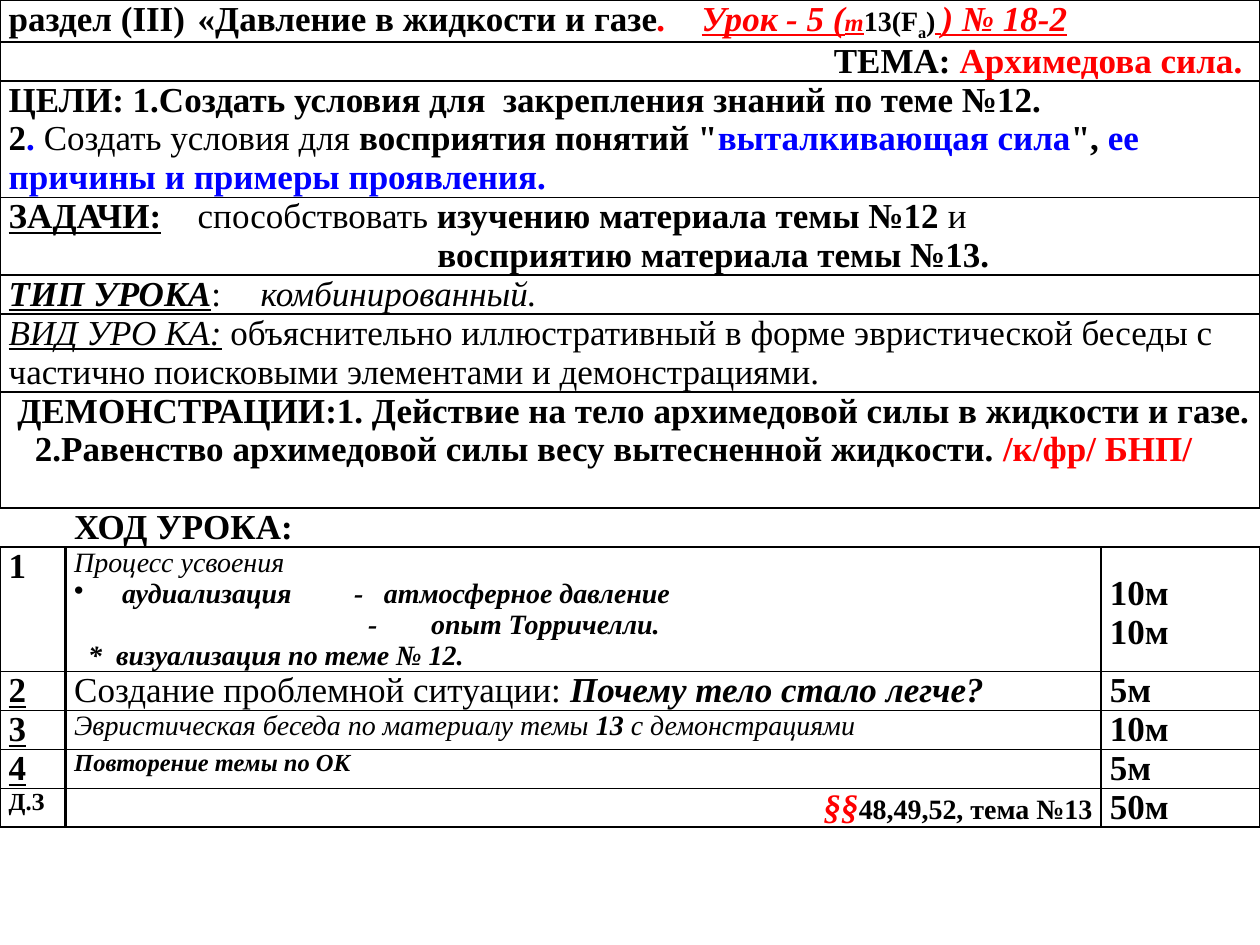
import pptx
import pptx.dml.color
import pptx.enum.text
import pptx.oxml.ns
import pptx.util
import lxml.etree

Pt = pptx.util.Pt
COLORS = {"black": "000000", "red": "FF0000", "blue": "0000FF"}
FONT = "Times New Roman"
LINE = 22.2
COLUMNS = [37.4, 591.8, 90.8]
ROW_LINES = [1.08, 1, 3, 2, 1, 2, 3, 1, 3.19, 1, 1, 1, 1]
RULES = [1, 1.5, 1.5, 1, 1, 1, 1.5, 1.5, 1.5, 1, 1, 1, 1, 1.5]
HEADING_ROW = 7


def run(text, style="", size=20, color="black", baseline=0):
    """Describe one run; style holds any of the letters b, i and u."""
    return text, style, size, color, baseline


def para(*runs, align="LEFT", left=0, hanging=0, bullet="", tabs=()):
    """Describe one paragraph with its indents and tab stops in points."""
    return runs, align, left, hanging, bullet, tabs


LESSON = [
    [para(run("раздел (III)\t«Давление в жидкости и газе", "b"), run(".\t", "bi", color="red"),
          run("Урок - 5 (", "biu", color="red"), run("т", "biu", 14, "red"), run("13(F", "b", 16),
          run("a", "b", 16, baseline=-25), run(")", "b", 16), run(" ", "biu", 14, "red"),
          run(") № 18-2", "biu", color="red"), tabs=(126, 464))],
    [para(run("ТЕМА: ", "b"), run("Архимедова сила. ", "b", color="red"), align="RIGHT")],
    [para(run("ЦЕЛИ: 1.Создать условия для  закрепления знаний по теме №12.", "b")),
     para(run("2", "b"), run(". ", "b", color="blue"), run("Создать условия для "),
          run('восприятия понятий "', "b"), run("выталкивающая сила", "b", color="blue"),
          run('", ', "b"), run("ее причины и примеры проявления.", "b", color="blue"))],
    [para(run("ЗАДАЧИ:", "bu"), run("\tспособствовать "),
          run("изучению материала темы №12", "b"), run(" и"), tabs=(102,)),
     para(run("восприятию материала темы №13.", "b"), left=245)],
    [para(run("ТИП УРОКА", "biu"), run(":\t"), run("комбинированный.", "i"), tabs=(146,))],
    [para(run("ВИД УРО КА:", "iu"), run(" объяснительно иллюстративный в форме эвристической "
          "беседы с частично поисковыми элементами и демонстрациями."))],
    [para(run("ДЕМОНСТРАЦИИ:1. Действие на тело архимедовой силы в жидкости и газе.", "b"), left=5),
     para(run("2.Равенство архимедовой силы весу вытесненной жидкости. ", "b"),
          run("/к/фр/ БНП/", "b", color="red"), left=15)],
]
STEPS = [
    ([para(run("1", "b"))],
     [para(run("Процесс усвоения", "i", 16)),
      para(run("аудиализация\t-\tатмосферное давление", "bi", 16),
           left=27.4, hanging=27.4, bullet="•", tabs=(160, 177)),
      para(run("-\tопыт Торричелли.", "bi", 16), tabs=(184,), left=168),
      para(run("*  визуализация по теме № 12.", "bi", 16), left=8)],
     [para(run("10м", "b")), para(run("10м", "b"))]),
    ([para(run("2", "bu"))],
     [para(run("Создание проблемной ситуации: "), run("Почему тело стало легче?", "bi"))],
     [para(run("5м", "b"))]),
    ([para(run("3", "bu"))],
     [para(run("Эвристическая беседа по материалу темы", "i", 16), run(" 13", "bi", 16),
           run(" с демонстрациями", "i", 16))],
     [para(run("10м", "b"))]),
    ([para(run("4", "bu"))], [para(run("Повторение темы по ОК", "bi", 14))],
     [para(run("5м", "b"))]),
    ([para(run("Д.З", "b", 14))],
     [para(run("§§", "bi", color="red"), run("48,49,52, тема №13", "b", 16), align="RIGHT")],
     [para(run("50м", "b"))]),
]


def add_child(parent, tag, **attributes):
    """Append a drawing element with the given attributes."""
    child = lxml.etree.SubElement(parent, pptx.oxml.ns.qn(tag))
    for name, value in attributes.items():
        child.set(name, str(value))
    return child


def write_paragraph(paragraph, content):
    """Format a paragraph and add its runs."""
    runs, align, left, hanging, bullet, tabs = content
    paragraph.alignment = getattr(pptx.enum.text.PP_ALIGN, align)
    properties = paragraph._p.get_or_add_pPr()
    properties.set("marL", str(Pt(left)))
    properties.set("indent", str(-Pt(hanging)))
    if bullet:
        add_child(properties, "a:buChar", char=bullet)
    if tabs:
        stops = add_child(properties, "a:tabLst")
        for stop in tabs:
            add_child(stops, "a:tab", pos=Pt(stop), algn="l")
    for text, style, size, color, baseline in runs:
        part = paragraph.add_run()
        part.text = text
        font = part.font
        font.name, font.size = FONT, Pt(size)
        font.bold, font.italic, font.underline = (mark in style for mark in "biu")
        font.color.rgb = pptx.dml.color.RGBColor.from_string(COLORS[color])
        if baseline:
            part._r.get_or_add_rPr().set("baseline", str(baseline * 1000))


def write_cell(cell, paragraphs):
    """Fill a cell with its paragraphs."""
    frame = cell.text_frame
    for index, content in enumerate(paragraphs):
        write_paragraph(frame.add_paragraph() if index else frame.paragraphs[0], content)


def rule_cell(cell, row, column):
    """Set margins, border lines and an empty fill for a cell."""
    cell.margin_left = cell.margin_right = Pt(5)
    cell.margin_top = cell.margin_bottom = 0
    sides = [1.5, 1.5, 1, 1] if row > HEADING_ROW else [1] * 4
    if row == HEADING_ROW:
        sides = [0] * 4
    elif row < HEADING_ROW:
        sides = [1, 0, 0, 1]
    widths = {"L": sides[column], "R": sides[column + 1], "T": RULES[row], "B": RULES[row + 1]}
    if row < HEADING_ROW and column == 0:
        widths["R"] = 1
    for side, width in widths.items():
        line = add_child(cell._tc.get_or_add_tcPr(), "a:ln" + side, w=Pt(width))
        if width:
            add_child(add_child(line, "a:solidFill"), "a:srgbClr", val=COLORS["black"])
        else:
            add_child(line, "a:noFill")
    cell.fill.background()


def add_lesson_plan(slide, left, top, width, height):
    """Place the lesson plan table in the given box."""
    plan = slide.shapes.add_table(len(ROW_LINES), len(COLUMNS), Pt(left), Pt(top),
                                  Pt(width), Pt(height)).table
    plan.first_row = plan.horz_banding = False
    for column, share in zip(plan.columns, COLUMNS):
        column.width = Pt(width * share / sum(COLUMNS))
    for row, lines in zip(plan.rows, ROW_LINES):
        row.height = Pt(height * lines / sum(ROW_LINES))
    for row in range(len(ROW_LINES)):
        for column in range(len(COLUMNS)):
            rule_cell(plan.cell(row, column), row, column)
    for row, paragraphs in enumerate(LESSON):
        plan.cell(row, 0).merge(plan.cell(row, 2))
        write_cell(plan.cell(row, 0), paragraphs)
    write_cell(plan.cell(HEADING_ROW, 1), [para(run("ХОД УРОКА:", "b"))])
    for row, step in enumerate(STEPS, HEADING_ROW + 1):
        for column, paragraphs in enumerate(step):
            write_cell(plan.cell(row, column), paragraphs)
    plan.cell(HEADING_ROW + 1, 2).margin_top = Pt(15.5)


def main():
    """Build the lesson slide and save it."""
    deck = pptx.Presentation()
    deck.slide_width, deck.slide_height = Pt(720), Pt(540)
    slide = deck.slides.add_slide(deck.slide_layouts[6])
    add_lesson_plan(slide, 0, 0, 720, LINE * sum(ROW_LINES))
    deck.save("out.pptx")


if __name__ == "__main__":
    main()
